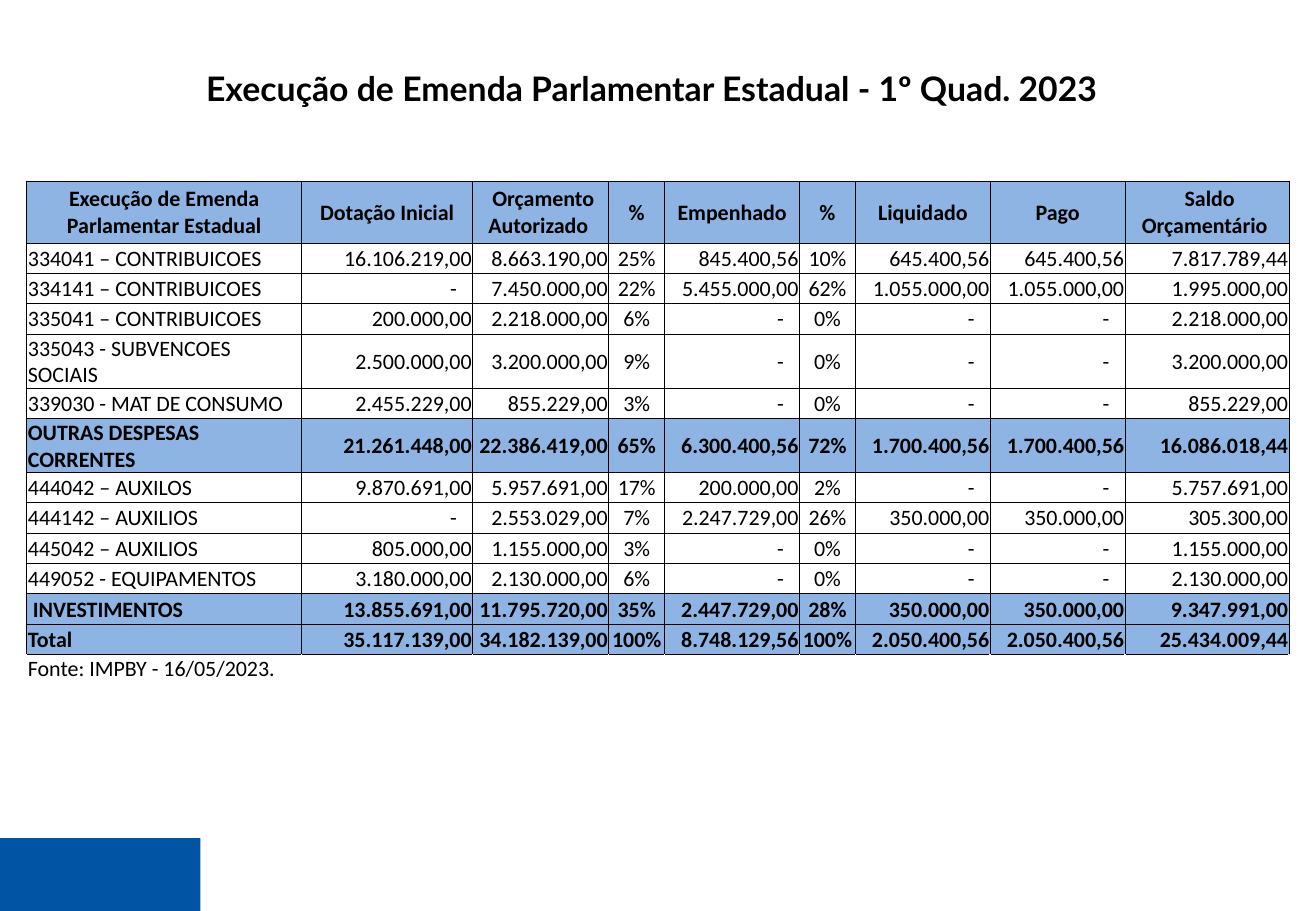
from lxml import etree
from pptx import Presentation
from pptx import util as u
from pptx.dml.color import RGBColor
from pptx.enum import shapes, text
from pptx.oxml.ns import qn

COLORS = {"black": "000000", "white": "FFFFFF", "band": "8DB4E2", "block": "0154A4"}
WIDTHS = [2.26, 1.41, 1.12, 0.46, 1.11, 0.46, 1.11, 1.11, 1.35]
HEADERS = ["Execução de Emenda Parlamentar Estadual", " Dotação Inicial ", " Orçamento Autorizado ",
           " % ", " Empenhado ", " % ", " Liquidado ", " Pago ", " Saldo Orçamentário "]
DATA = [
    "334041 – CONTRIBUICOES|16.106.219,00|8.663.190,00|25%|845.400,56|10%|645.400,56|645.400,56|7.817.789,44",
    "334141 – CONTRIBUICOES|-|7.450.000,00|22%|5.455.000,00|62%|1.055.000,00|1.055.000,00|1.995.000,00",
    "335041 – CONTRIBUICOES|200.000,00|2.218.000,00|6%|-|0%|-|-|2.218.000,00",
    "335043 - SUBVENCOES SOCIAIS|2.500.000,00|3.200.000,00|9%|-|0%|-|-|3.200.000,00",
    "339030 - MAT DE CONSUMO|2.455.229,00|855.229,00|3%|-|0%|-|-|855.229,00",
    "OUTRAS DESPESAS CORRENTES|21.261.448,00|22.386.419,00|65%|6.300.400,56|72%|1.700.400,56|1.700.400,56|16.086.018,44",
    "444042 – AUXILOS|9.870.691,00|5.957.691,00|17%|200.000,00|2%|-|-|5.757.691,00",
    "444142 – AUXILIOS|-|2.553.029,00|7%|2.247.729,00|26%|350.000,00|350.000,00|305.300,00",
    "445042 – AUXILIOS|805.000,00|1.155.000,00|3%|-|0%|-|-|1.155.000,00",
    "449052 - EQUIPAMENTOS|3.180.000,00|2.130.000,00|6%|-|0%|-|-|2.130.000,00",
    " INVESTIMENTOS|13.855.691,00|11.795.720,00|35%|2.447.729,00|28%|350.000,00|350.000,00|9.347.991,00",
    "Total|35.117.139,00|34.182.139,00|100%|8.748.129,56|100%|2.050.400,56|2.050.400,56|25.434.009,44",
]
ROWS = [HEADERS] + [line.split("|") for line in DATA]
ROWS.append(["Fonte: IMPBY - 16/05/2023."] + [""] * 8)
BANDS = {0, 6, 11, 12}
PERCENT_COLS = {3, 5}


def write(tf, value, size=13, font="Calibri", bold=False, align="LEFT", color="black"):
    p = tf.paragraphs[0]
    p.alignment = getattr(text.PP_ALIGN, align)
    r = p.add_run()
    r.text = value
    r.font.size = u.Pt(size)
    r.font.name = font
    r.font.bold = bold
    r.font.color.rgb = RGBColor.from_string(COLORS[color])


class Deck:
    def __init__(self, width, height):
        self.prs = Presentation()
        self.prs.slide_width = u.Inches(width)
        self.prs.slide_height = u.Inches(height)
        self.s = self.prs.slides.add_slide(self.prs.slide_layouts[6])

    def title(self, value, *box):
        sp = self.s.shapes.add_textbox(*map(u.Inches, box))
        sp.text_frame.word_wrap = True
        write(sp.text_frame, value, size=20, font="Lato", bold=True, align="CENTER")

    def block(self, color, *box):
        sp = self.s.shapes.add_shape(shapes.MSO_SHAPE.RECTANGLE, *map(u.Inches, box))
        sp.shadow.inherit = False
        sp.fill.solid()
        sp.fill.fore_color.rgb = RGBColor.from_string(COLORS[color])
        sp.line.fill.background()

    def border(self, cell, sides):
        pr = cell._tc.get_or_add_tcPr()
        for i, side in enumerate(sides):
            ln = etree.Element(qn(f"a:ln{side}"), w=str(u.Pt(0.5)))
            fill = etree.SubElement(ln, qn("a:solidFill"))
            etree.SubElement(fill, qn("a:srgbClr"), val=COLORS["black"])
            pr.insert(i, ln)

    def cell(self, cell, value, band=False, bold=False, align="LEFT", anchor="MIDDLE", sides="LRTB"):
        cell.margin_left = cell.margin_top = u.Inches(0.01)
        cell.margin_right = u.Inches(0.13 if value == "-" else 0.01)
        cell.margin_bottom = 0
        cell.vertical_anchor = getattr(text.MSO_ANCHOR, anchor)
        cell.fill.solid()
        cell.fill.fore_color.rgb = RGBColor.from_string(COLORS["band" if band else "white"])
        write(cell.text_frame, value, bold=bold, align=align)
        self.border(cell, sides)

    def table(self, rows, widths, *box):
        frame = self.s.shapes.add_table(len(rows), len(widths), *map(u.Inches, box))
        tb = frame.table
        tb.first_row = tb.horz_banding = False
        for col, width in zip(tb.columns, widths):
            col.width = u.Inches(width)
        last = len(rows) - 1
        for i, values in enumerate(rows):
            tb.rows[i].height = u.Inches(0.51 if i == 0 else 0.24 if i == last else 0.25)
            for j, value in enumerate(values):
                align = "CENTER" if i == 0 or j in PERCENT_COLS else "RIGHT" if j else "LEFT"
                self.cell(tb.cell(i, j), value, band=i in BANDS, bold=i in BANDS, align=align,
                          anchor="TOP" if i == last else "MIDDLE",
                          sides="T" if i == last else "LRTB")


def main():
    deck = Deck(10.83, 7.5)
    deck.title("Execução de Emenda Parlamentar Estadual - 1º Quad. 2023", 0.06, 0.51, 10.61, 0.44)
    deck.table(ROWS, WIDTHS, 0.22, 1.49, sum(WIDTHS), 3.75)
    deck.block("block", 0, 6.9, 1.65, 0.6)
    deck.prs.save("out.pptx")


if __name__ == "__main__":
    main()
